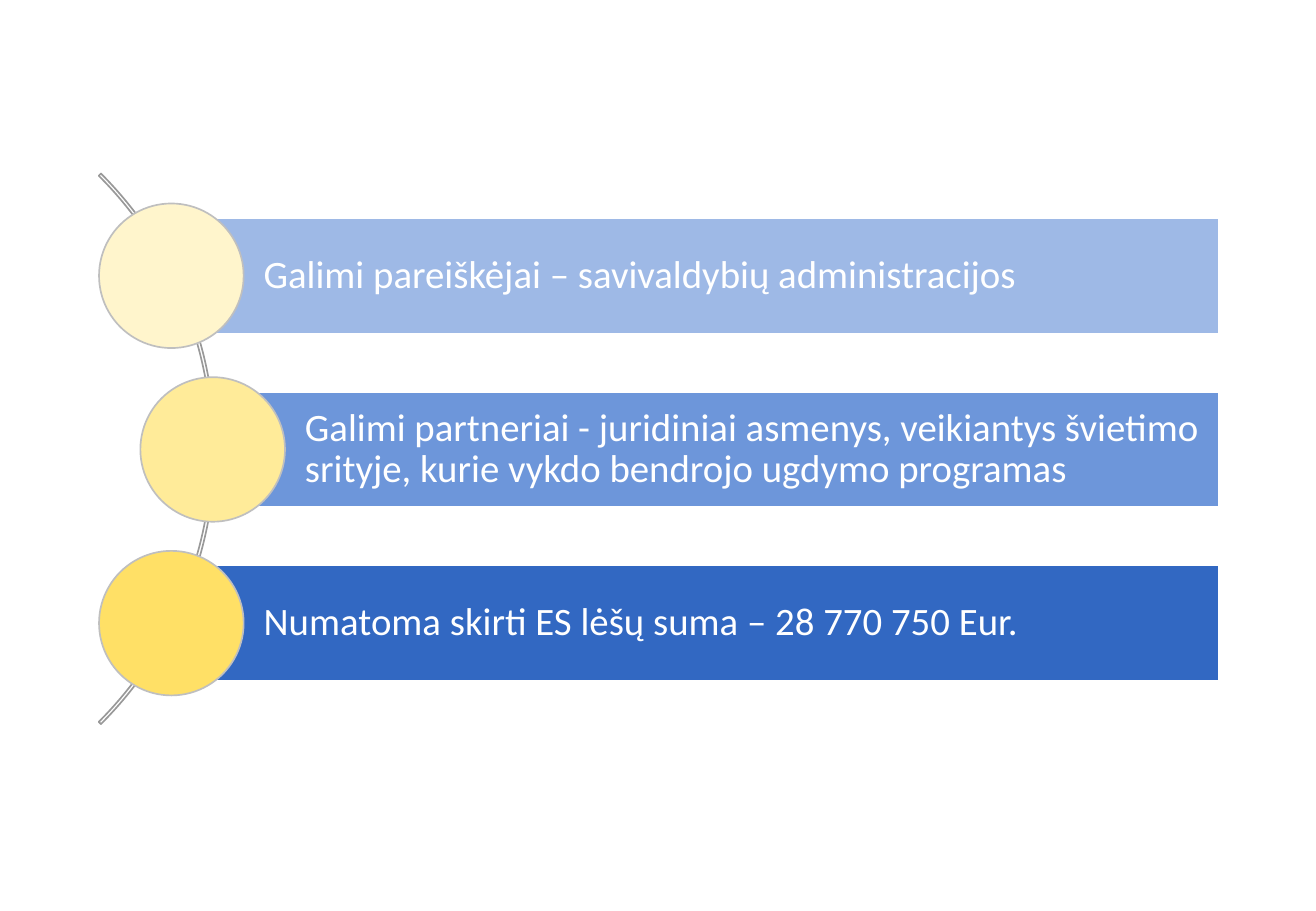
from pptx import Presentation
from pptx.dml.color import RGBColor
from pptx.enum.shapes import MSO_SHAPE as Kind
from pptx.enum.text import MSO_ANCHOR as Anchor, PP_ALIGN as Align
from pptx.util import Inches, Pt

RIGHT, TOP, STEP = 10.03, 2.27, 1.43
BAR, DOT = 0.95, 1.19
ROWS = [
    (1.41, "9EB9E6", "FFF5CC", "Galimi pareiškėjai – savivaldybių administracijos"),
    (1.75, "6D96DA", "FFEB99", "Galimi partneriai - juridiniai asmenys, veikiantys švietimo "
     "srityje, kurie vykdo bendrojo ugdymo programas"),
    (1.41, "3268C2", "FFE066", "Numatoma skirti ES lėšų suma – 28 770 750 Eur."),
]


def color(code):
    return RGBColor.from_string(code)


def add_form(slide, kind, box, line, fill=None):
    form = slide.shapes.add_shape(kind, *map(Inches, box))
    form.shadow.inherit = False
    if fill:
        form.fill.solid()
        form.fill.fore_color.rgb = color(fill)
    else:
        form.fill.background()
    form.line.color.rgb = color(line)
    form.line.width = Pt(1)
    return form


def add_arc(slide):
    arc = add_form(slide, Kind.BLOCK_ARC, (-4.64, 0.49, 6.41, 6.41), "999999")
    # Start and end angles (315 and 45 degrees), then relative thickness
    for index, value in enumerate((189, 27, 0.004)):
        arc.adjustments[index] = value


def add_bar(slide, left, mid, fill, text):
    box = (left, mid - BAR / 2, RIGHT - left, BAR)
    frame = add_form(slide, Kind.RECTANGLE, box, "FFFFFF", fill).text_frame
    frame.word_wrap = True
    frame.vertical_anchor = Anchor.MIDDLE
    frame.margin_left = Inches(0.76)
    frame.margin_right = frame.margin_top = frame.margin_bottom = Inches(0.06)
    frame.text = text
    para = frame.paragraphs[0]
    para.alignment = Align.LEFT
    para.line_spacing = 0.9
    font = para.runs[0].font
    font.name = "Calibri"
    font.size = Pt(23)
    font.color.rgb = color("FFFFFF")


def add_dot(slide, center, mid, fill):
    box = (center - DOT / 2, mid - DOT / 2, DOT, DOT)
    add_form(slide, Kind.OVAL, box, "BFBFBF", fill)


def main():
    deck = Presentation()
    deck.slide_width, deck.slide_height = Inches(10.83), Inches(7.5)
    slide = deck.slides.add_slide(deck.slide_layouts[6])
    add_arc(slide)
    for row, (left, blue, yellow, text) in enumerate(ROWS):
        mid = TOP + row * STEP
        add_bar(slide, left, mid, blue, text)
        add_dot(slide, left, mid, yellow)
    deck.save("out.pptx")


if __name__ == "__main__":
    main()
